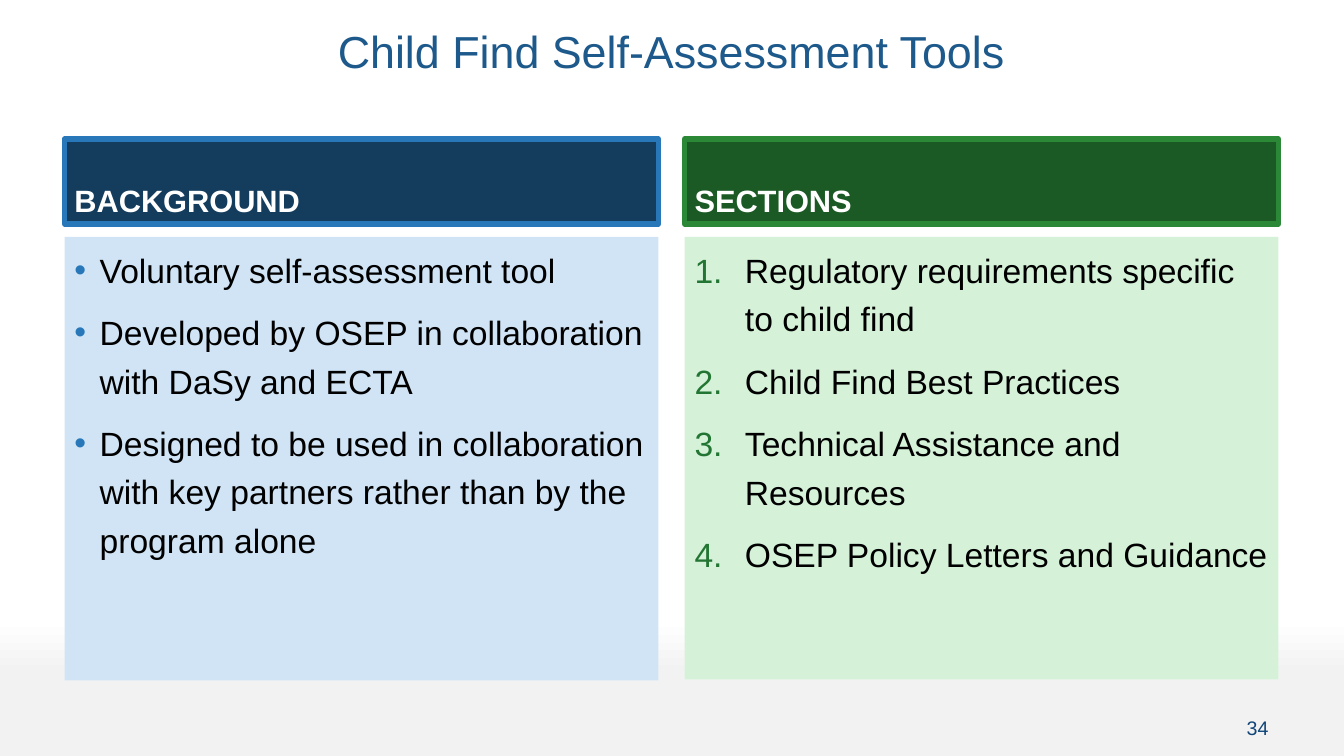
from lxml import etree
from pptx import Presentation
from pptx import util as u
from pptx.dml.color import RGBColor
from pptx.enum import shapes, text
from pptx.oxml import ns

WHITE = RGBColor(0xFF, 0xFF, 0xFF)
BLACK = RGBColor(0, 0, 0)
GRAY = RGBColor(0xF2, 0xF2, 0xF2)
TITLE_BLUE = RGBColor(0x1D, 0x59, 0x8B)
NUMBER_BLUE = RGBColor(0x10, 0x45, 0x78)
NAVY = RGBColor(0x13, 0x3C, 0x5D)
BLUE = RGBColor(0x27, 0x77, 0xB9)
PALE_BLUE = RGBColor(0xD0, 0xE4, 0xF5)
DARK_GREEN = RGBColor(0x1C, 0x5A, 0x25)
GREEN = RGBColor(0x2A, 0x88, 0x37)
NUMERAL_GREEN = RGBColor(0x22, 0x75, 0x32)
PALE_GREEN = RGBColor(0xD5, 0xF2, 0xD9)

LEFT, COLUMN_WIDTH, COLUMN_STEP = 0.64, 5.89, 6.15
TOP = text.MSO_ANCHOR.TOP
MIDDLE = text.MSO_ANCHOR.MIDDLE
BOTTOM = text.MSO_ANCHOR.BOTTOM


class SlideBuilder:
    """Draws the elements of one slide in a shared style."""

    def __init__(self, slide, font_name="Arial"):
        self.slide = slide
        self.font_name = font_name

    def background(self):
        fill = self.slide.background.fill
        fill.gradient()
        fill.gradient_angle = 270
        for stop, position, color in zip(fill.gradient_stops, (0.82, 0.89), (WHITE, GRAY)):
            stop.position = position
            stop.color.rgb = color

    def style(self, paragraph, size, color, align=text.PP_ALIGN.LEFT, bold=False):
        paragraph.alignment = align
        font = paragraph.font
        font.name, font.size, font.bold = self.font_name, u.Pt(size), bold
        font.color.rgb = color

    def frame(self, shape, anchor):
        frame = shape.text_frame
        frame.word_wrap = True
        frame.vertical_anchor = anchor
        return frame

    def label(self, words, at, size, color, align, anchor, spacing=1.0):
        box = self.slide.shapes.add_textbox(*map(u.Inches, at))
        paragraph = self.frame(box, anchor).paragraphs[0]
        paragraph.text = words
        paragraph.line_spacing = spacing
        self.style(paragraph, size, color, align)

    def panel(self, at, fill, border=None):
        panel = self.slide.shapes.add_shape(shapes.MSO_SHAPE.RECTANGLE, *map(u.Inches, at))
        panel.shadow.inherit = False
        panel.fill.solid()
        panel.fill.fore_color.rgb = fill
        if border is None:
            panel.line.fill.background()
        else:
            panel.line.color.rgb = border
            panel.line.width = u.Pt(4)
        return panel

    def heading(self, words, at, fill, border):
        paragraph = self.frame(self.panel(at, fill, border), BOTTOM).paragraphs[0]
        paragraph.text = words
        self.style(paragraph, 22, WHITE, bold=True)

    def marker(self, paragraph, color, indent, numbered):
        properties = paragraph._p.get_or_add_pPr()
        properties.set("marL", str(u.Inches(indent)))
        properties.set("indent", str(-u.Inches(indent)))
        marker_color = etree.SubElement(properties, ns.qn("a:buClr"))
        etree.SubElement(marker_color, ns.qn("a:srgbClr"), val=str(color))
        etree.SubElement(properties, ns.qn("a:buFont"), typeface=self.font_name)
        if numbered:
            etree.SubElement(properties, ns.qn("a:buAutoNum"), type="arabicPeriod")
        else:
            etree.SubElement(properties, ns.qn("a:buChar"), char="•")

    def item_list(self, items, at, fill, marker_color, indent, numbered):
        frame = self.frame(self.panel(at, fill), TOP)
        for index, item in enumerate(items):
            paragraph = frame.add_paragraph() if index else frame.paragraphs[0]
            paragraph.text = item
            self.marker(paragraph, marker_color, indent, numbered)
            paragraph.line_spacing = 1.2
            if index:
                paragraph.space_before = u.Pt(10)
            self.style(paragraph, 24, BLACK)


def main():
    deck = Presentation()
    deck.slide_width, deck.slide_height = u.Inches(13.33), u.Inches(7.5)
    builder = SlideBuilder(deck.slides.add_slide(deck.slide_layouts[6]))
    builder.background()
    builder.label("34", (11.33, 6.94, 1.35, 0.55), 14, NUMBER_BLUE,
                  text.PP_ALIGN.RIGHT, MIDDLE)
    builder.label("Child Find Self-Assessment Tools", (LEFT, 0.25, 12.04, 1), 32,
                  TITLE_BLUE, text.PP_ALIGN.CENTER, TOP, spacing=0.9)

    background_items = [
        "Voluntary self-assessment tool",
        "Developed by OSEP in collaboration with DaSy and ECTA",
        "Designed to be used in collaboration with key partners rather than by the program alone",
    ]
    section_items = [
        "Regulatory requirements specific to child find",
        "Child Find Best Practices",
        "Technical Assistance and Resources",
        "OSEP Policy Letters and Guidance",
    ]
    columns = [
        ("BACKGROUND", NAVY, BLUE, background_items, 4.4, PALE_BLUE, BLUE, 0.25, False),
        ("SECTIONS", DARK_GREEN, GREEN, section_items, 4.39, PALE_GREEN, NUMERAL_GREEN, 0.5, True),
    ]
    for column, (heading, dark, border, items, height, pale, accent, indent, numbered) in enumerate(columns):
        left = LEFT + column * COLUMN_STEP
        builder.heading(heading, (left, 1.38, COLUMN_WIDTH, 0.84), dark, border)
        builder.item_list(items, (left, 2.35, COLUMN_WIDTH, height), pale, accent, indent, numbered)

    deck.save("out.pptx")


if __name__ == "__main__":
    main()
